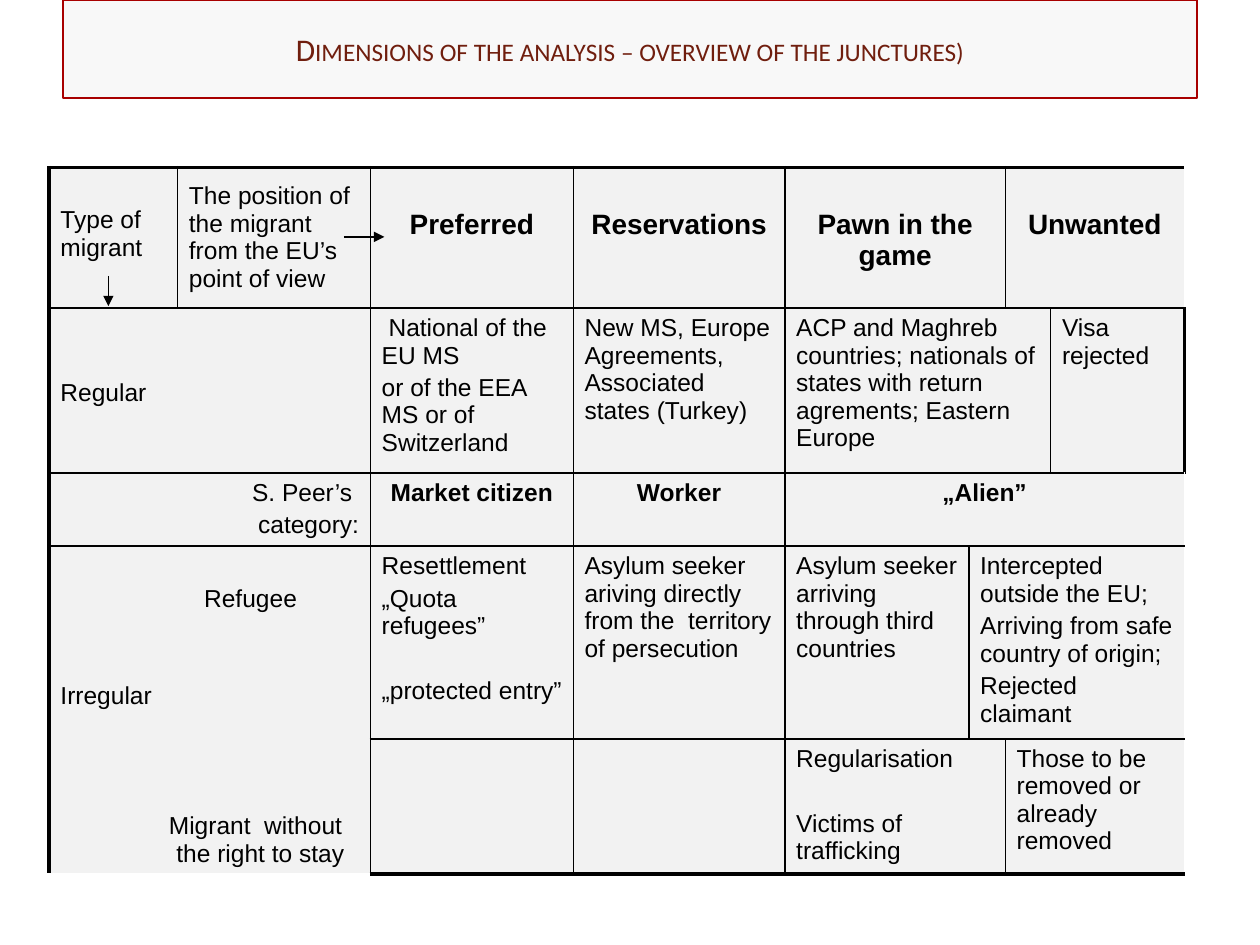
from dataclasses import dataclass

from lxml.etree import SubElement
from pptx import Presentation
from pptx.dml.color import RGBColor
from pptx.enum.shapes import MSO_CONNECTOR as Connector
from pptx.enum.text import MSO_ANCHOR as Anchor, MSO_AUTO_SIZE as AutoSize, PP_ALIGN as Align
from pptx.oxml.ns import qn
from pptx.util import Inches, Pt


@dataclass(frozen=True)
class Theme:
    ink: str = "000000"
    panel: str = "F2F2F2"
    title_ink: str = "701E0E"
    title_line: str = "A80000"
    title_font: str = "Calibri"
    body_font: str = "Arial"
    title_size: float = 18
    header_size: float = 16
    body_size: float = 14
    paragraph_gap: float = 2.8
    line_step: float = 18.6
    inner_border: float = 1
    outer_border: float = 2.25


@dataclass
class Line:
    text: str
    skip: int = 0
    indent: float = 0
    hanging: float = 0


@dataclass
class Entry:
    row: int
    column: int
    lines: tuple = ()
    rows: int = 1
    columns: int = 1
    align: Align = Align.LEFT
    bold: bool = False
    size: float = 14
    top: float = 0.05
    bottom: float = 0.05


THEME = Theme()
COLUMN_WIDTHS = (1.02, 1.53, 1.61, 1.68, 1.46, 0.29, 0.36, 1.06)
ROW_HEIGHTS = (1.11, 1.31, 0.58, 1.53, 1.07)


def header(column, text, columns=1):
    return Entry(0, column, (Line(text),), columns=columns, align=Align.CENTER,
                 bold=True, size=THEME.header_size, top=0.33, bottom=0.12)


def category(column, text, columns=1):
    return Entry(2, column, (Line(text),), columns=columns, align=Align.CENTER, bold=True)


def body(row, column, *texts, rows=1, columns=1, **options):
    lines = tuple(Line(text) if isinstance(text, str) else text for text in texts)
    return Entry(row, column, lines, rows, columns, **options)


ENTRIES = (
    body(0, 0, Line("Type of migrant", skip=1)),
    body(0, 1, "The position of the migrant from the EU’s point of view", top=0.12, bottom=0.12),
    header(2, "Preferred"),
    header(3, "Reservations"),
    header(4, "Pawn in the game", columns=2),
    header(6, "Unwanted", columns=2),
    body(1, 0, Line("Regular", skip=2), columns=2),
    body(1, 2, " National of the EU MS", "or of the EEA  MS or of Switzerland"),
    body(1, 3, "New MS, Europe Agreements, Associated states (Turkey)"),
    body(1, 4, "ACP and Maghreb countries; nationals of states with return agrements; Eastern Europe",
         columns=3),
    body(1, 7, "Visa rejected"),
    body(2, 0, "S. Peer’s ", "category:", columns=2, align=Align.RIGHT),
    category(2, "Market citizen"),
    category(3, "Worker"),
    category(4, "„Alien”", columns=4),
    body(3, 0,
         Line("Refugee", skip=1, indent=1.14),
         Line("Irregular", skip=2),
         Line("Migrant  without the right to stay", skip=3, indent=0.92, hanging=0.06),
         rows=2, columns=2),
    body(3, 2, "Resettlement", "„Quota refugees”", Line("„protected entry”", skip=1)),
    body(3, 3, "Asylum seeker ariving directly from the  territory of persecution"),
    body(3, 4, "Asylum seeker arriving through third countries"),
    body(3, 5, "Intercepted outside the EU;", "Arriving from safe country of origin;",
         "Rejected claimant", columns=3),
    body(4, 2),
    body(4, 3),
    body(4, 4, "Regularisation", Line("Victims of trafficking", skip=1), columns=2),
    body(4, 6, "Those to be removed or already removed", columns=2),
)


def rgb(value):
    return RGBColor.from_string(value)


def write_text(paragraph, text, *, size, font=THEME.body_font, color=THEME.ink, bold=False,
               align=Align.LEFT, before=0, indent=0, hanging=0, small_caps=False):
    run = paragraph.add_run()
    run.text = text
    run.font.size = Pt(size)
    run.font.name = font
    run.font.bold = bold
    run.font.color.rgb = rgb(color)
    if small_caps:
        run.font._element.set("cap", "small")
    paragraph.alignment = align
    paragraph.space_before = Pt(before)
    if indent:
        properties = paragraph._p.get_or_add_pPr()
        properties.set("marL", str(Inches(indent)))
        properties.set("indent", str(-Inches(hanging)))


def add_title(slide, text):
    title = slide.shapes.title
    title.left, title.top, title.width, title.height = Inches(0.5), 0, Inches(9), Inches(0.78)
    title.fill.solid()
    title.fill.fore_color.rgb = rgb(THEME.panel)
    color = title._element.spPr.find(qn("a:solidFill")).find(qn("a:srgbClr"))
    SubElement(color, qn("a:alpha"), val="50000")
    title.line.color.rgb = rgb(THEME.title_line)
    title.line.width = Pt(1.25)
    frame = title.text_frame
    frame.auto_size = AutoSize.NONE
    frame.vertical_anchor = Anchor.MIDDLE
    write_text(frame.paragraphs[0], text, size=THEME.title_size, font=THEME.title_font,
               color=THEME.title_ink, align=Align.CENTER, small_caps=True)


def set_borders(cell, widths):
    properties = cell._tc.get_or_add_tcPr()
    for position, (side, width) in enumerate(widths.items()):
        border = SubElement(properties, qn(f"a:ln{side}"), w=str(Pt(width)))
        fill = SubElement(border, qn("a:solidFill"))
        SubElement(fill, qn("a:srgbClr"), val=THEME.ink)
        properties.insert(position, border)


def format_span(table, entry):
    last_row = entry.row + entry.rows - 1
    last_column = entry.column + entry.columns - 1
    for row in range(entry.row, last_row + 1):
        for column in range(entry.column, last_column + 1):
            cell = table.cell(row, column)
            cell.fill.solid()
            cell.fill.fore_color.rgb = rgb(THEME.panel)
            edges = {
                "L": (column == entry.column, column == 0),
                "R": (column == last_column, column == len(COLUMN_WIDTHS) - 1),
                "T": (row == entry.row, row == 0),
                "B": (row == last_row, row == len(ROW_HEIGHTS) - 1),
            }
            set_borders(cell, {
                side: THEME.outer_border if outer else THEME.inner_border
                for side, (on_edge, outer) in edges.items() if on_edge
            })


def fill_entry(table, entry):
    cell = table.cell(entry.row, entry.column)
    if entry.rows * entry.columns > 1:
        cell.merge(table.cell(entry.row + entry.rows - 1, entry.column + entry.columns - 1))
    format_span(table, entry)
    cell.margin_left = cell.margin_right = Inches(0.09)
    cell.margin_top, cell.margin_bottom = Inches(entry.top), Inches(entry.bottom)
    frame = cell.text_frame
    for index, line in enumerate(entry.lines):
        skipped = line.skip * THEME.line_step
        if index == 0:
            cell.margin_top = Inches(entry.top) + Pt(skipped)
            paragraph, before = frame.paragraphs[0], 0
        else:
            paragraph, before = frame.add_paragraph(), THEME.paragraph_gap + skipped
        write_text(paragraph, line.text, size=entry.size, bold=entry.bold, align=entry.align,
                   before=before, indent=line.indent, hanging=line.hanging)


def add_junctures_table(slide):
    table = slide.shapes.add_table(
        len(ROW_HEIGHTS), len(COLUMN_WIDTHS), Inches(0.39), Inches(1.33),
        Inches(sum(COLUMN_WIDTHS)), Inches(sum(ROW_HEIGHTS))).table
    table.first_row = table.horz_banding = False
    for column, width in zip(table.columns, COLUMN_WIDTHS):
        column.width = Inches(width)
    for row, height in zip(table.rows, ROW_HEIGHTS):
        row.height = Inches(height)
    for entry in ENTRIES:
        fill_entry(table, entry)


def add_arrow(slide, *ends):
    arrow = slide.shapes.add_connector(Connector.STRAIGHT, *map(Inches, ends))
    arrow.line.color.rgb = rgb(THEME.ink)
    arrow.line.width = Pt(0.75)
    SubElement(arrow.line._get_or_add_ln(), qn("a:tailEnd"), type="triangle")
    SubElement(arrow._element.spPr, qn("a:effectLst"))


def main():
    presentation = Presentation()
    presentation.slide_width, presentation.slide_height = Inches(10), Inches(7.5)
    slide = presentation.slides.add_slide(presentation.slide_layouts[5])
    add_title(slide, "Dimensions of the analysis – overview of the junctures)")
    add_junctures_table(slide)
    add_arrow(slide, 2.73, 1.88, 3.05, 1.88)
    add_arrow(slide, 0.86, 2.19, 0.86, 2.43)
    presentation.save("out.pptx")


if __name__ == "__main__":
    main()
